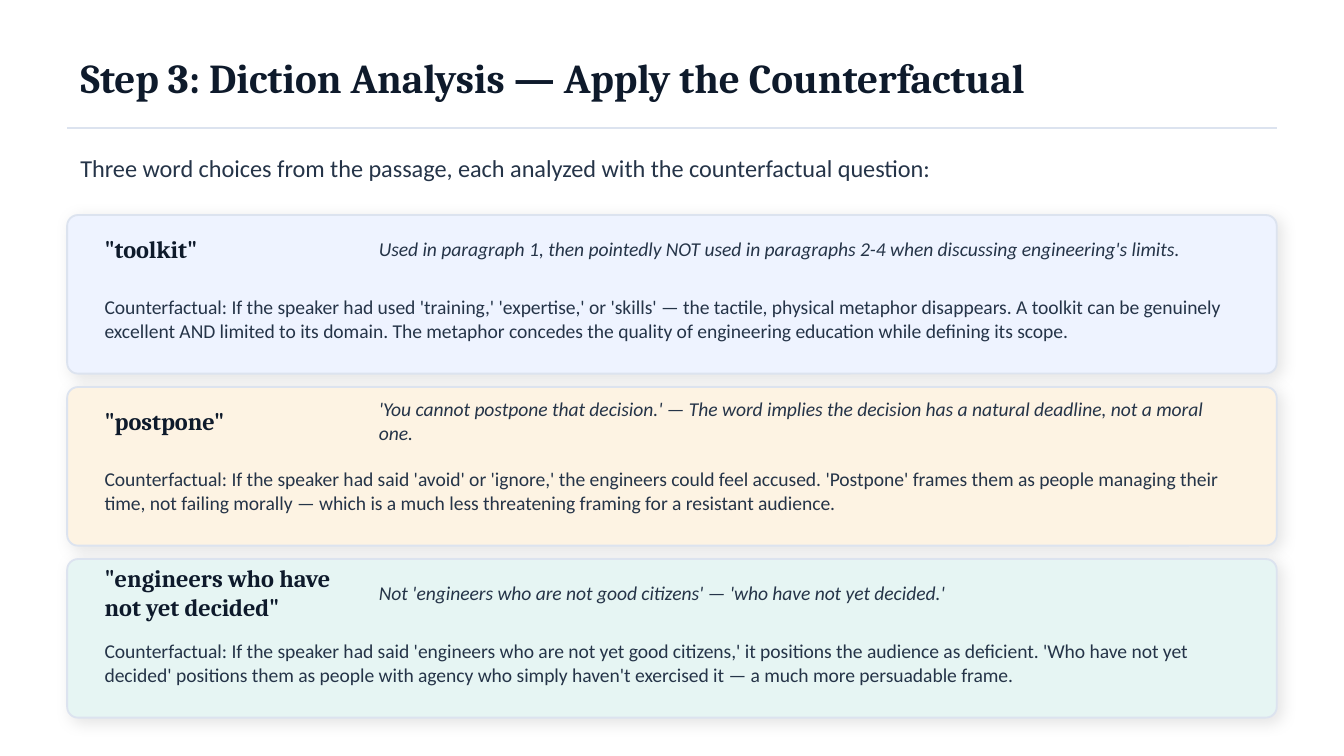
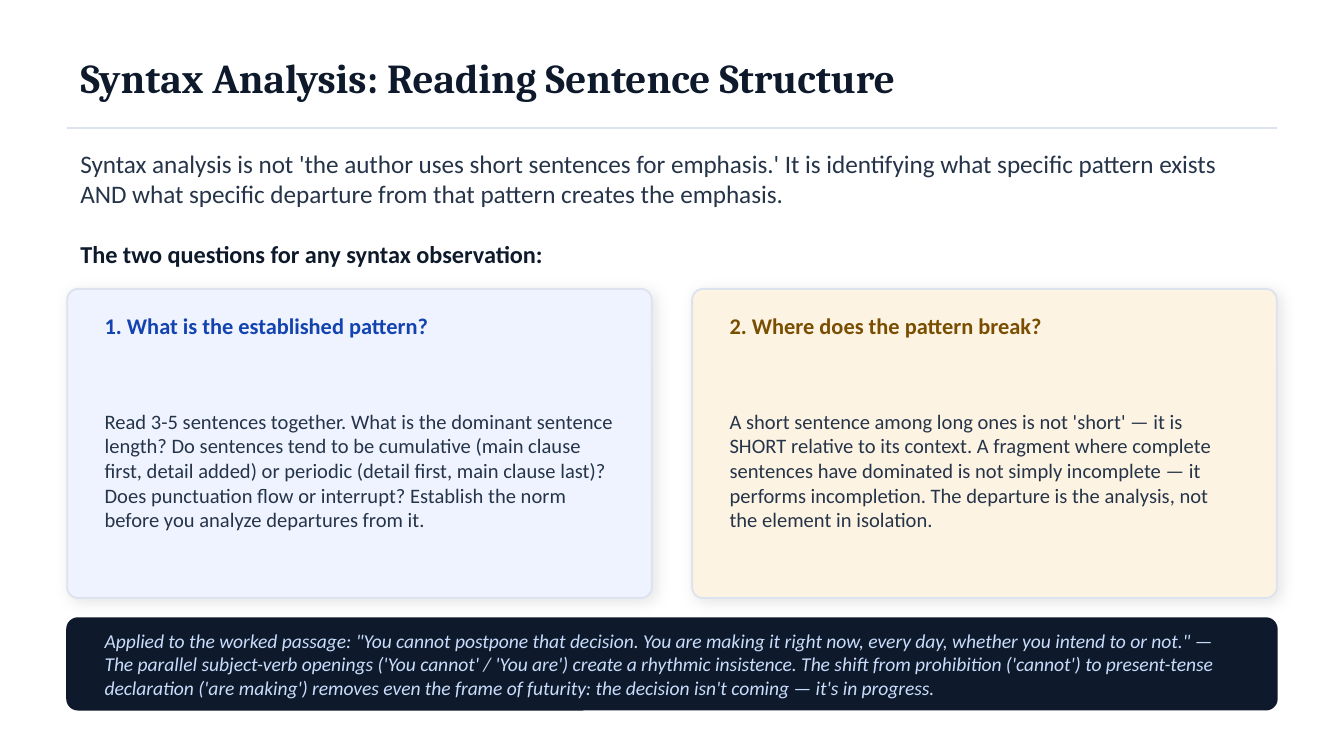
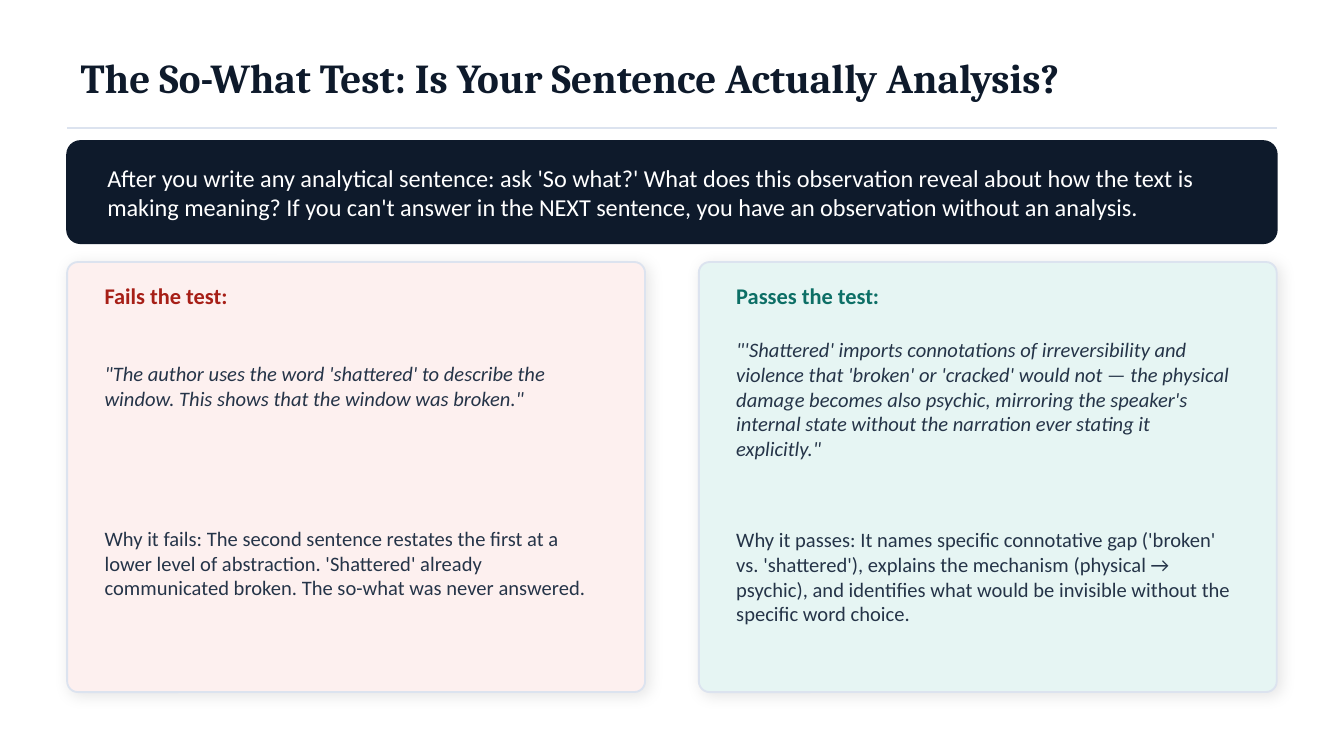
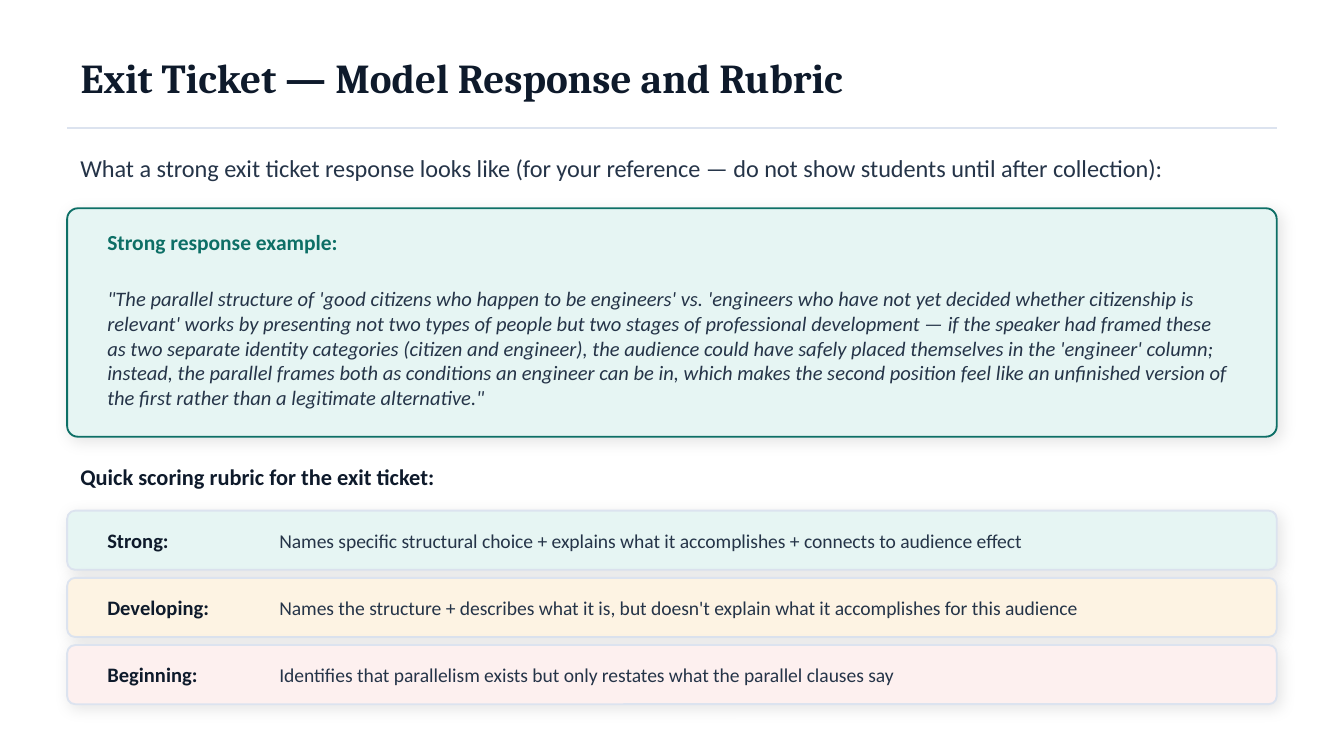
from dataclasses import dataclass
from typing import NamedTuple

from lxml import etree
from pptx import Presentation
from pptx.dml.color import RGBColor
from pptx.enum.shapes import MSO_CONNECTOR, MSO_SHAPE
from pptx.enum.text import MSO_ANCHOR, MSO_AUTO_SIZE, PP_ALIGN
from pptx.oxml.ns import qn
from pptx.presentation import Presentation as Deck
from pptx.shapes.base import BaseShape
from pptx.slide import Slide
from pptx.util import Emu, Pt

ROUNDED = MSO_SHAPE.ROUNDED_RECTANGLE
STRAIGHT = MSO_CONNECTOR.STRAIGHT
MIDDLE = MSO_ANCHOR.MIDDLE
NO_AUTOFIT = MSO_AUTO_SIZE.NONE
LEFT = PP_ALIGN.LEFT

EMU_PER_PX = 9144
PAGE_WIDTH = 1000
MARGIN = 50
CONTENT_WIDTH = PAGE_WIDTH - 2 * MARGIN
RULE_TOP = 95
CARD_INSET = 18
WIDE_INSET = 20
TITLE_ONLY = 5

INK = "0E1A2B"
BODY = "253448"
BORDER = "DCE3EF"
BLUE_TINT = "EEF3FF"
AMBER_TINT = "FDF3E3"
TEAL_TINT = "E6F5F3"
RED_TINT = "FDF0EF"
BLUE = "1343B0"
AMBER = "7A4E00"
TEAL = "0D6F66"
RED = "A71F17"
ICE = "CADCFC"
WHITE = "FFFFFF"


class Area(NamedTuple):
    left: int
    top: int
    width: int
    height: int


class Style(NamedTuple):
    size: float
    color: str = BODY
    bold: bool = False
    italic: bool = False
    font: str = "Calibri"


TITLE = Style(22, INK, bold=True, font="Cambria")
WORD = Style(13, INK, bold=True, font="Cambria")
LEAD = Style(13)
SMALL = Style(10.5)
SMALL_ITALIC = Style(10.5, italic=True)
REGULAR = Style(11)
QUOTE = Style(11, italic=True)


@dataclass
class WordChoice:
    word: str
    context: str
    counterfactual: str
    fill: str


@dataclass
class Question:
    heading: str
    explanation: str
    fill: str
    accent: str


@dataclass
class Verdict:
    heading: str
    sentence: str
    reason: str
    fill: str
    accent: str
    sentence_height: int


@dataclass
class RubricLevel:
    name: str
    criteria: str
    fill: str


WORD_CHOICES = [
    WordChoice(
        '"toolkit"',
        "Used in paragraph 1, then pointedly NOT used in paragraphs 2-4 when discussing engineering's limits.",
        "Counterfactual: If the speaker had used 'training,' 'expertise,' or 'skills' — the tactile, physical "
        "metaphor disappears. A toolkit can be genuinely excellent AND limited to its domain. The metaphor "
        "concedes the quality of engineering education while defining its scope.",
        BLUE_TINT,
    ),
    WordChoice(
        '"postpone"',
        "'You cannot postpone that decision.' — The word implies the decision has a natural deadline, "
        "not a moral one.",
        "Counterfactual: If the speaker had said 'avoid' or 'ignore,' the engineers could feel accused. "
        "'Postpone' frames them as people managing their time, not failing morally — which is a much less "
        "threatening framing for a resistant audience.",
        AMBER_TINT,
    ),
    WordChoice(
        '"engineers who have not yet decided"',
        "Not 'engineers who are not good citizens' — 'who have not yet decided.'",
        "Counterfactual: If the speaker had said 'engineers who are not yet good citizens,' it positions the "
        "audience as deficient. 'Who have not yet decided' positions them as people with agency who simply "
        "haven't exercised it — a much more persuadable frame.",
        TEAL_TINT,
    ),
]

QUESTIONS = [
    Question(
        "1. What is the established pattern?",
        "Read 3-5 sentences together. What is the dominant sentence length? Do sentences tend to be cumulative "
        "(main clause first, detail added) or periodic (detail first, main clause last)? Does punctuation flow "
        "or interrupt? Establish the norm before you analyze departures from it.",
        BLUE_TINT,
        BLUE,
    ),
    Question(
        "2. Where does the pattern break?",
        "A short sentence among long ones is not 'short' — it is SHORT relative to its context. A fragment "
        "where complete sentences have dominated is not simply incomplete — it performs incompletion. "
        "The departure is the analysis, not the element in isolation.",
        AMBER_TINT,
        AMBER,
    ),
]

VERDICTS = [
    Verdict(
        "Fails the test:",
        "\"The author uses the word 'shattered' to describe the window. This shows that the window was broken.\"",
        "Why it fails: The second sentence restates the first at a lower level of abstraction. 'Shattered' "
        "already communicated broken. The so-what was never answered.",
        RED_TINT,
        RED,
        90,
    ),
    Verdict(
        "Passes the test:",
        "\"'Shattered' imports connotations of irreversibility and violence that 'broken' or 'cracked' would "
        "not — the physical damage becomes also psychic, mirroring the speaker's internal state without the "
        "narration ever stating it explicitly.\"",
        "Why it passes: It names specific connotative gap ('broken' vs. 'shattered'), explains the mechanism "
        "(physical → psychic), and identifies what would be invisible without the specific word choice.",
        TEAL_TINT,
        TEAL,
        110,
    ),
]

RUBRIC = [
    RubricLevel(
        "Strong:",
        "Names specific structural choice + explains what it accomplishes + connects to audience effect",
        TEAL_TINT,
    ),
    RubricLevel(
        "Developing:",
        "Names the structure + describes what it is, but doesn't explain what it accomplishes for this audience",
        AMBER_TINT,
    ),
    RubricLevel(
        "Beginning:",
        "Identifies that parallelism exists but only restates what the parallel clauses say",
        RED_TINT,
    ),
]


def px(length: int) -> Emu:
    return Emu(length * EMU_PER_PX)


def rgb(color: str) -> RGBColor:
    return RGBColor.from_string(color)


def write(box: BaseShape, text: str, style: Style) -> None:
    frame = box.text_frame
    frame.word_wrap = True
    frame.auto_size = NO_AUTOFIT
    frame.vertical_anchor = MIDDLE
    para = frame.paragraphs[0]
    para.text = text
    para.alignment = LEFT
    para.font.name = style.font
    para.font.size = Pt(style.size)
    para.font.bold = style.bold
    para.font.italic = style.italic
    para.font.color.rgb = rgb(style.color)


def add_text(page: Slide, area: Area, text: str, style: Style) -> None:
    write(page.shapes.add_textbox(*map(px, area)), text, style)


def add_shadow(panel: BaseShape) -> None:
    effects = panel._element.spPr.find(qn("a:effectLst"))
    shadow = etree.SubElement(
        effects, qn("a:outerShdw"), blurRad=str(Pt(8)), dist=str(Pt(2)), dir=str(45 * 60000),
        algn="bl", rotWithShape="0",
    )
    color = etree.SubElement(shadow, qn("a:srgbClr"), val="000000")
    etree.SubElement(color, qn("a:alpha"), val="10000")


def add_panel(page: Slide, area: Area, fill: str, border: str, radius: int = 8) -> BaseShape:
    panel = page.shapes.add_shape(ROUNDED, *map(px, area))
    panel.adjustments[0] = radius / min(area.width, area.height)
    panel.shadow.inherit = False
    panel.fill.solid()
    panel.fill.fore_color.rgb = rgb(fill)
    panel.line.color.rgb = rgb(border)
    panel.line.width = Pt(1)
    return panel


def add_card(page: Slide, area: Area, fill: str, border: str = BORDER, radius: int = 8) -> None:
    add_shadow(add_panel(page, area, fill, border, radius))


def add_page(deck: Deck, title: str) -> Slide:
    page = deck.slides.add_slide(deck.slide_layouts[TITLE_ONLY])
    heading = page.shapes.title
    heading.left, heading.top, heading.width, heading.height = map(px, Area(MARGIN, 25, CONTENT_WIDTH, 65))
    write(heading, title, TITLE)
    rule = page.shapes.add_connector(
        STRAIGHT, px(MARGIN), px(RULE_TOP), px(MARGIN + CONTENT_WIDTH), px(RULE_TOP)
    )
    rule.line.color.rgb = rgb(BORDER)
    rule.line.width = Pt(1.2)
    etree.SubElement(rule._element.spPr, qn("a:effectLst"))
    return page


def column_left(index: int, width: int) -> int:
    return MARGIN + index * (CONTENT_WIDTH - width)


def build_diction(deck: Deck) -> None:
    page = add_page(deck, "Step 3: Diction Analysis — Apply the Counterfactual")
    add_text(
        page, Area(MARGIN, 105, CONTENT_WIDTH, 40),
        "Three word choices from the passage, each analyzed with the counterfactual question:", LEAD,
    )
    height, gap = 118, 10
    left = MARGIN + CARD_INSET
    for index, choice in enumerate(WORD_CHOICES):
        top = 160 + index * (height + gap)
        add_card(page, Area(MARGIN, top, CONTENT_WIDTH, height), choice.fill)
        add_text(page, Area(left, top + 8, 200, 34), choice.word, WORD)
        add_text(page, Area(272, top + 8, 658, 34), choice.context, SMALL_ITALIC)
        add_text(page, Area(left, top + 44, 862, 66), choice.counterfactual, SMALL)


def build_syntax(deck: Deck) -> None:
    page = add_page(deck, "Syntax Analysis: Reading Sentence Structure")
    add_text(
        page, Area(MARGIN, 105, CONTENT_WIDTH, 55),
        "Syntax analysis is not 'the author uses short sentences for emphasis.' It is identifying what specific "
        "pattern exists AND what specific departure from that pattern creates the emphasis.",
        Style(13.5),
    )
    add_text(
        page, Area(MARGIN, 170, CONTENT_WIDTH, 38),
        "The two questions for any syntax observation:", Style(13, INK, bold=True),
    )
    width, top = 435, 215
    text_width = width - 2 * CARD_INSET
    for index, question in enumerate(QUESTIONS):
        left = column_left(index, width)
        text_left = left + CARD_INSET
        add_card(page, Area(left, top, width, 230), question.fill)
        add_text(
            page, Area(text_left, top + 8, text_width, 38),
            question.heading, Style(12, question.accent, bold=True),
        )
        add_text(page, Area(text_left, top + 50, text_width, 170), question.explanation, REGULAR)
    add_panel(page, Area(MARGIN, 460, CONTENT_WIDTH, 68), INK, INK)
    add_text(
        page, Area(MARGIN + CARD_INSET, 465, CONTENT_WIDTH - 2 * CARD_INSET, 58),
        'Applied to the worked passage: "You cannot postpone that decision. You are making it right now, every '
        "day, whether you intend to or not.\" — The parallel subject-verb openings ('You cannot' / 'You are') "
        "create a rhythmic insistence. The shift from prohibition ('cannot') to present-tense declaration "
        "('are making') removes even the frame of futurity: the decision isn't coming — it's in progress.",
        Style(10.5, ICE, italic=True),
    )


def build_so_what(deck: Deck) -> None:
    page = add_page(deck, "The So-What Test: Is Your Sentence Actually Analysis?")
    add_panel(page, Area(MARGIN, 105, CONTENT_WIDTH, 76), INK, INK, radius=10)
    add_text(
        page, Area(MARGIN + WIDE_INSET, 112, CONTENT_WIDTH - 2 * WIDE_INSET, 62),
        "After you write any analytical sentence: ask 'So what?' What does this observation reveal about how "
        "the text is making meaning? If you can't answer in the NEXT sentence, you have an observation without "
        "an analysis.",
        Style(13, WHITE),
    )
    width, top, reason_bottom = 430, 195, 500
    text_width = width - 2 * CARD_INSET
    for index, verdict in enumerate(VERDICTS):
        left = column_left(index, width)
        text_left = left + CARD_INSET
        sentence_top = top + 47
        reason_top = sentence_top + verdict.sentence_height + 6
        add_card(page, Area(left, top, width, 320), verdict.fill)
        add_text(
            page, Area(text_left, top + 8, text_width, 34),
            verdict.heading, Style(12, verdict.accent, bold=True),
        )
        add_text(
            page, Area(text_left, sentence_top, text_width, verdict.sentence_height), verdict.sentence, QUOTE
        )
        add_text(
            page, Area(text_left, reason_top, text_width, reason_bottom - reason_top), verdict.reason, REGULAR
        )


def build_exit_ticket(deck: Deck) -> None:
    page = add_page(deck, "Exit Ticket — Model Response and Rubric")
    left = MARGIN + WIDE_INSET
    text_width = CONTENT_WIDTH - 2 * WIDE_INSET
    add_text(
        page, Area(MARGIN, 105, CONTENT_WIDTH, 40),
        "What a strong exit ticket response looks like (for your reference — do not show students until "
        "after collection):",
        LEAD,
    )
    add_card(page, Area(MARGIN, 155, CONTENT_WIDTH, 170), TEAL_TINT, TEAL)
    add_text(page, Area(left, 163, text_width, 34), "Strong response example:", Style(11.5, TEAL, bold=True))
    add_text(
        page, Area(left, 200, text_width, 118),
        "\"The parallel structure of 'good citizens who happen to be engineers' vs. 'engineers who have not yet "
        "decided whether citizenship is relevant' works by presenting not two types of people but two stages of "
        "professional development — if the speaker had framed these as two separate identity categories "
        "(citizen and engineer), the audience could have safely placed themselves in the 'engineer' column; "
        "instead, the parallel frames both as conditions an engineer can be in, which makes the second position "
        "feel like an unfinished version of the first rather than a legitimate alternative.\"",
        QUOTE,
    )
    add_text(
        page, Area(MARGIN, 338, CONTENT_WIDTH, 34),
        "Quick scoring rubric for the exit ticket:", Style(12, INK, bold=True),
    )
    height, gap = 44, 6
    for index, level in enumerate(RUBRIC):
        top = 380 + index * (height + gap)
        add_card(page, Area(MARGIN, top, CONTENT_WIDTH, height), level.fill, radius=6)
        add_text(page, Area(left, top + 6, 120, 32), level.name, Style(11, INK, bold=True))
        add_text(page, Area(198, top + 6, 732, 32), level.criteria, SMALL)


def main() -> None:
    deck = Presentation()
    deck.slide_width = px(PAGE_WIDTH)
    deck.slide_height = Emu(deck.slide_width * 9 // 16)
    build_diction(deck)
    build_syntax(deck)
    build_so_what(deck)
    build_exit_ticket(deck)
    deck.save("out.pptx")


if __name__ == "__main__":
    main()
